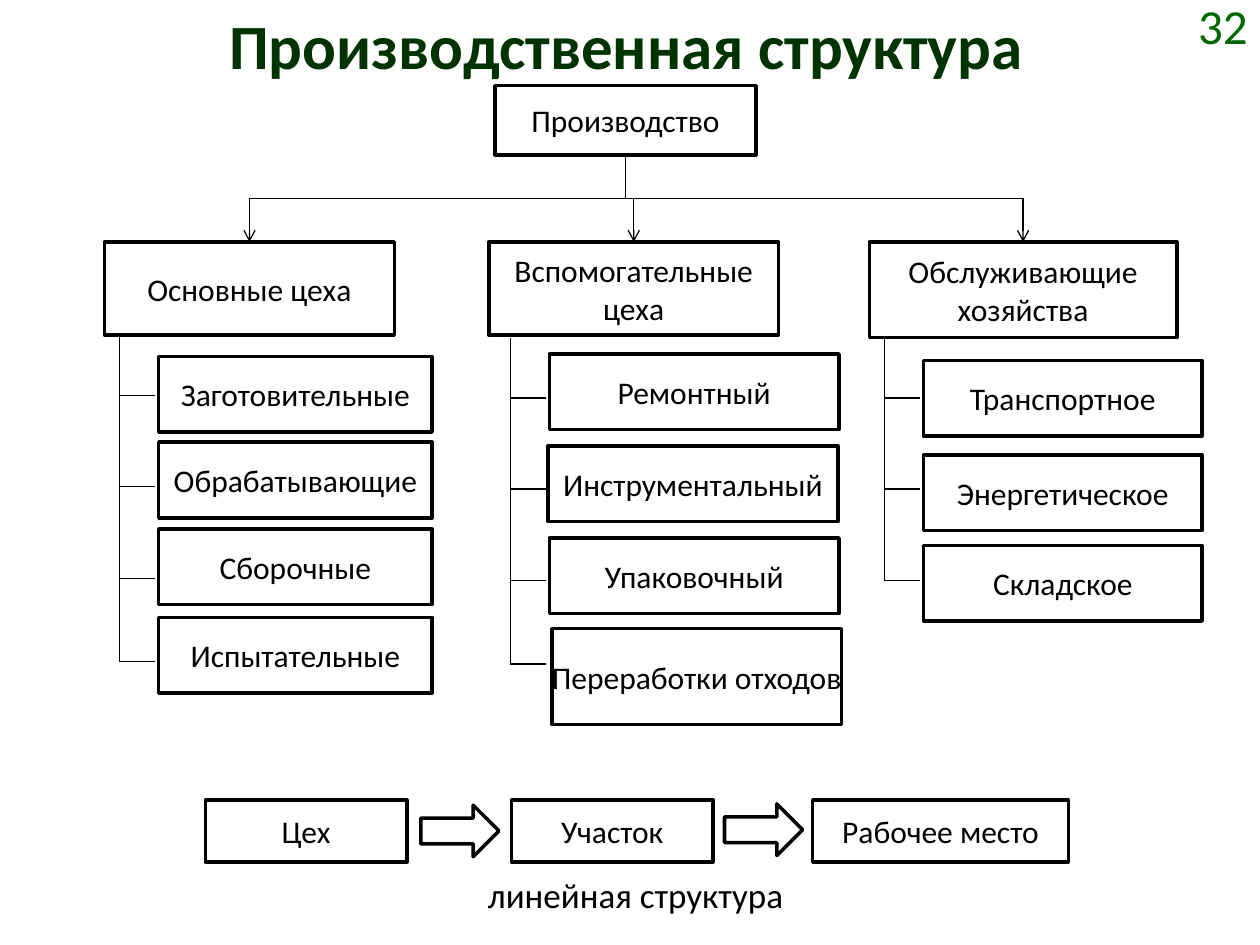
from lxml import etree
from pptx import Presentation
from pptx.dml.color import RGBColor
from pptx.enum import shapes, text
from pptx.oxml.ns import qn
from pptx.util import Inches, Pt

TITLE = "Производственная структура"
PAGE = "32"
CAPTION = "линейная структура"
FONT, BLACK, WHITE = "Calibri", "000000", "FFFFFF"

ROOT = ("Производство", 3.93, 0.68, 2.07, 0.55)
DEPARTMENT_TOP, UNIT_HEIGHT, TICK = 1.92, 0.6, 0.28
DEPARTMENTS = [
    {"name": "Основные цеха", "left": 0.83, "width": 2.3, "height": 0.74,
     "spine": (0.95, 2.66), "ticks": [3.14, 3.86, 4.59, 5.25], "unit_width": 2.17,
     "units": [("Заготовительные", 1.26, 2.83), ("Обрабатывающие", 1.26, 3.51),
               ("Сборочные", 1.26, 4.2), ("Испытательные", 1.26, 4.9)]},
    {"name": "Вспомогательные цеха", "left": 3.88, "width": 2.3, "height": 0.74,
     "spine": (4.05, 2.68), "ticks": [3.16, 3.88, 4.61, 5.27], "unit_width": 2.3,
     "units": [("Ремонтный", 4.36, 2.81), ("Инструментальный", 4.35, 3.54),
               ("Упаковочный", 4.36, 4.27), ("Переработки отходов", 4.38, 4.99, 0.76)]},
    {"name": "Обслуживающие хозяйства", "left": 6.9, "width": 2.44, "height": 0.76,
     "spine": (7.02, 2.68), "ticks": [3.16, 3.88, 4.61], "unit_width": 2.21,
     "units": [("Транспортное", 7.33, 2.86), ("Энергетическое", 7.33, 3.61),
               ("Складское", 7.33, 4.33)]},
]
CHAIN_TOP, CHAIN_HEIGHT = 6.35, 0.49
CHAIN = [("Цех", 1.63, 1.6), ("Участок", 4.06, 1.6), ("Рабочее место", 6.45, 2.03)]
CHAIN_ARROWS = [(3.34, 6.39), (5.75, 6.38)]


def rgb(color):
    return RGBColor.from_string(color)


def write(frame, words, size, color=BLACK, align=text.PP_ALIGN.CENTER, bold=False):
    frame.text = words
    frame.word_wrap = True
    paragraph = frame.paragraphs[0]
    paragraph.alignment = align
    font = paragraph.runs[0].font
    font.name, font.size, font.bold = FONT, Pt(size), bold
    font.color.rgb = rgb(color)


def outlined(slide, preset, left, top, width, height):
    """Add a white preset shape with a black outline."""
    shape = slide.shapes.add_shape(preset, *map(Inches, (left, top, width, height)))
    shape.shadow.inherit = False
    shape.fill.solid()
    shape.fill.fore_color.rgb = rgb(WHITE)
    shape.line.color.rgb = rgb(BLACK)
    shape.line.width = Pt(2)
    return shape


def box(slide, words, left, top, width, height):
    frame = outlined(slide, shapes.MSO_SHAPE.RECTANGLE, left, top, width, height).text_frame
    frame.margin_left = frame.margin_right = frame.margin_top = frame.margin_bottom = 0
    frame.vertical_anchor = text.MSO_ANCHOR.MIDDLE
    write(frame, words, 18)


def line(slide, x1, y1, x2, y2, kind=shapes.MSO_CONNECTOR.STRAIGHT):
    connector = slide.shapes.add_connector(kind, *map(Inches, (x1, y1, x2, y2)))
    connector.line.color.rgb = rgb(BLACK)
    connector.line.width = Pt(0.75)
    etree.SubElement(connector._element.spPr, qn("a:effectLst"))
    return connector


def drop_arrow(slide, x1, y1, x2, y2):
    """Add an elbow that runs down, across and down: a quarter-turned connector."""
    center_x, center_y = (x1 + x2) / 2, (y1 + y2) / 2
    half_run = (y2 - y1) / 2 * (1 if x2 < x1 else -1)
    half_rise = abs(x2 - x1) / 2
    connector = line(slide, center_x - half_run, center_y - half_rise,
                     center_x + half_run, center_y + half_rise, shapes.MSO_CONNECTOR.ELBOW)
    degrees = 90 if x2 < x1 else 270
    connector._element.spPr.find(qn("a:xfrm")).set("rot", str(degrees * 60000))
    etree.SubElement(connector.line._get_or_add_ln(), qn("a:tailEnd"), type="arrow")


def add_department(slide, dept):
    box(slide, dept["name"], dept["left"], DEPARTMENT_TOP, dept["width"], dept["height"])
    spine_x, spine_top = dept["spine"]
    line(slide, spine_x, spine_top, spine_x, dept["ticks"][-1])
    for y in dept["ticks"]:
        line(slide, spine_x, y, spine_x + TICK, y)
    for name, left, top, *height in dept["units"]:
        box(slide, name, left, top, dept["unit_width"], height[0] if height else UNIT_HEIGHT)


def main():
    deck = Presentation()
    deck.slide_width, deck.slide_height = Inches(10), Inches(7.5)
    slide = deck.slides.add_slide(deck.slide_layouts[5])

    title = slide.shapes.title
    title.left, title.top, title.width, title.height = map(Inches, (0.47, 0, 9, 0.94))
    title.text_frame.vertical_anchor = text.MSO_ANCHOR.TOP
    write(title.text_frame, TITLE, 36, "003300", bold=True)

    page = slide.shapes.add_textbox(*map(Inches, (8.98, 0, 1.02, 0.39))).text_frame
    page.vertical_anchor = text.MSO_ANCHOR.MIDDLE
    write(page, PAGE, 28, "006600", text.PP_ALIGN.RIGHT)

    box(slide, *ROOT)
    _, left, top, width, height = ROOT
    for dept in DEPARTMENTS:
        add_department(slide, dept)
        drop_arrow(slide, left + width / 2, top + height,
                   dept["left"] + dept["width"] / 2, DEPARTMENT_TOP)

    for name, left, width in CHAIN:
        box(slide, name, left, CHAIN_TOP, width, CHAIN_HEIGHT)
    for left, top in CHAIN_ARROWS:
        outlined(slide, shapes.MSO_SHAPE.RIGHT_ARROW, left, top, 0.62, 0.41)

    caption = slide.shapes.add_textbox(*map(Inches, (1.72, 6.88, 6.65, 0.44))).text_frame
    write(caption, CAPTION, 20)
    caption.paragraphs[0].space_before = Pt(12)

    deck.save("out.pptx")


if __name__ == "__main__":
    main()
